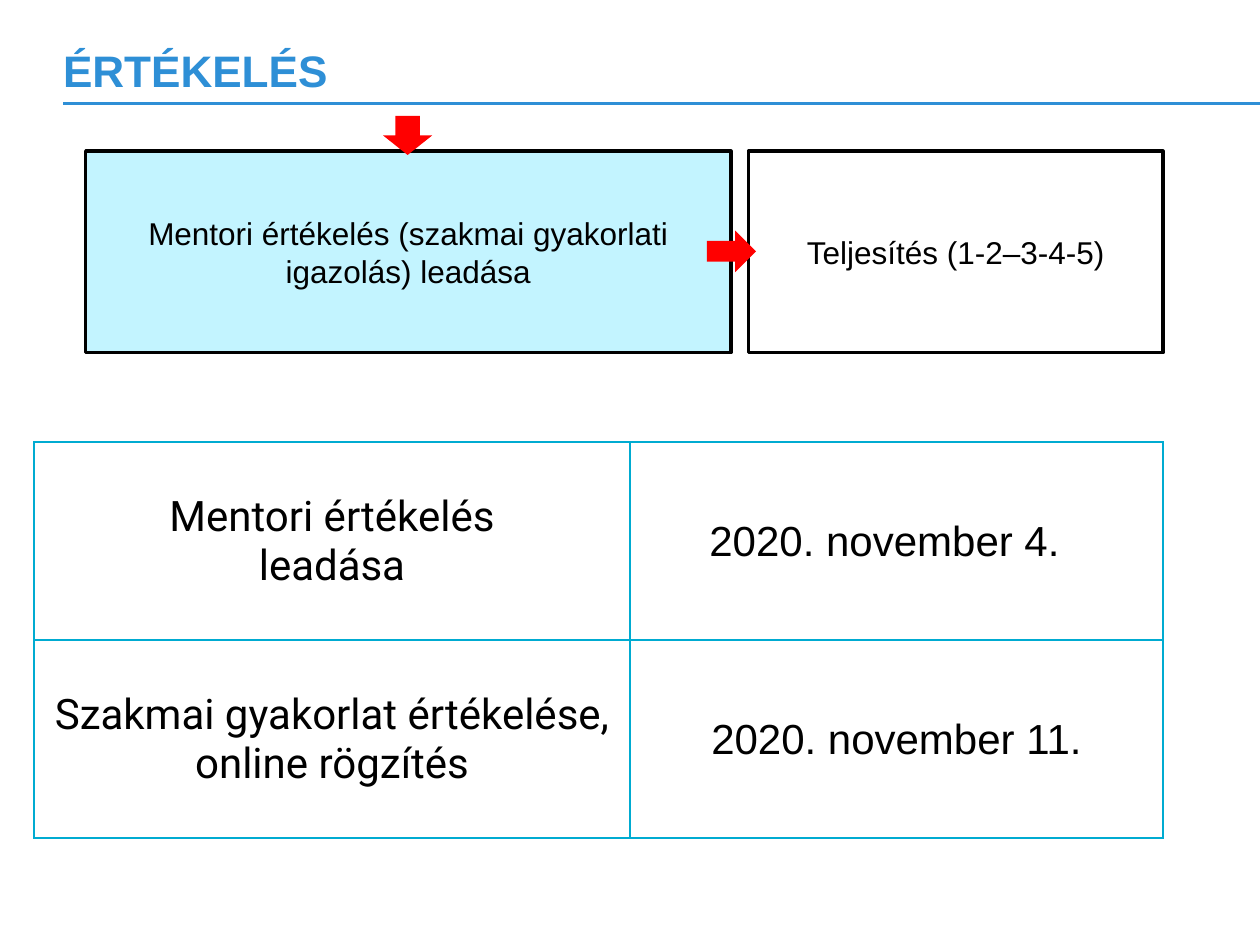
from dataclasses import dataclass

from lxml import etree
from pptx import Presentation
from pptx.dml.color import RGBColor
from pptx.enum.shapes import MSO_CONNECTOR, MSO_SHAPE
from pptx.enum.text import MSO_ANCHOR, MSO_AUTO_SIZE, PP_ALIGN
from pptx.oxml.ns import qn
from pptx.util import Inches, Pt

RECT = MSO_SHAPE.RECTANGLE
RIGHT_ARROW = MSO_SHAPE.RIGHT_ARROW
DOWN_ARROW = MSO_SHAPE.DOWN_ARROW
STRAIGHT = MSO_CONNECTOR.STRAIGHT
MIDDLE = MSO_ANCHOR.MIDDLE
LEFT = PP_ALIGN.LEFT
CENTER = PP_ALIGN.CENTER
NO_FIT = MSO_AUTO_SIZE.NONE


@dataclass(frozen=True)
class Theme:
    accent: str = "2E8FD6"
    highlight: str = "C3F4FF"
    white: str = "FFFFFF"
    black: str = "000000"
    arrow: str = "FF0000"
    border: str = "00ABD1"
    font: str = "Arial"
    label_font: str = "Roboto"
    title_size: float = 25.2
    box_size: float = 18
    table_size: float = 24


class SlideBuilder:
    def __init__(self, slide, theme):
        self.slide = slide
        self.theme = theme

    def format_text(self, tf, size, color, name, align=CENTER, bold=False):
        for p in tf.paragraphs:
            p.alignment = align
            for r in p.runs:
                r.font.size = Pt(size)
                r.font.name = name
                r.font.bold = bold
                r.font.color.rgb = RGBColor.from_string(color)

    def title(self, text, left, top, width, height):
        sp = self.slide.shapes.title
        sp.left, sp.top = Inches(left), Inches(top)
        sp.width, sp.height = Inches(width), Inches(height)
        tf = sp.text_frame
        tf.text = text
        tf.auto_size = NO_FIT
        tf.vertical_anchor = MIDDLE
        tf.margin_left = tf.margin_right = tf.margin_top = tf.margin_bottom = 0
        t = self.theme
        self.format_text(tf, t.title_size, t.accent, t.font, LEFT, True)

    def rule(self, x1, x2, y):
        line = self.slide.shapes.add_connector(
            STRAIGHT, Inches(x1), Inches(y), Inches(x2), Inches(y))
        line.line.color.rgb = RGBColor.from_string(self.theme.accent)
        line.line.width = Pt(1.5)
        etree.SubElement(line._element.spPr, qn("a:effectLst"))

    def shape(self, kind, left, top, width, height, fill):
        sp = self.slide.shapes.add_shape(
            kind, Inches(left), Inches(top), Inches(width), Inches(height))
        sp.shadow.inherit = False
        sp.fill.solid()
        sp.fill.fore_color.rgb = RGBColor.from_string(fill)
        sp.line.fill.background()
        return sp

    def box(self, text, left, top, width, height, fill):
        sp = self.shape(RECT, left, top, width, height, fill)
        sp.line.color.rgb = RGBColor.from_string(self.theme.black)
        sp.line.width = Pt(2)
        tf = sp.text_frame
        tf.word_wrap = True
        tf.vertical_anchor = MIDDLE
        tf.text = text
        t = self.theme
        self.format_text(tf, t.box_size, t.black, t.font)

    def cell_borders(self, cell):
        tcPr = cell._tc.get_or_add_tcPr()
        for i, side in enumerate(("a:lnL", "a:lnR", "a:lnT", "a:lnB")):
            ln = etree.Element(qn(side), w=str(Pt(1)))
            fill = etree.SubElement(ln, qn("a:solidFill"))
            etree.SubElement(fill, qn("a:srgbClr"), val=self.theme.border)
            tcPr.insert(i, ln)

    def table(self, rows, left, top, widths, row_height):
        frame = self.slide.shapes.add_table(
            len(rows), len(widths), Inches(left), Inches(top),
            Inches(sum(widths)), Inches(row_height * len(rows)))
        table = frame.table
        table.first_row = table.horz_banding = False
        for column, width in zip(table.columns, widths):
            column.width = Inches(width)
        t = self.theme
        for i, row in enumerate(rows):
            table.rows[i].height = Inches(row_height)
            for j, (text, right_margin) in enumerate(row):
                cell = table.cell(i, j)
                cell.text_frame.text = text
                cell.vertical_anchor = MIDDLE
                cell.margin_left = cell.margin_top = Inches(0.01)
                cell.margin_right = Inches(right_margin)
                cell.margin_bottom = 0
                cell.fill.solid()
                cell.fill.fore_color.rgb = RGBColor.from_string(t.white)
                name = t.label_font if j == 0 else t.font
                self.format_text(cell.text_frame, t.table_size, t.black, name)
                self.cell_borders(cell)


def main():
    prs = Presentation()
    prs.slide_width, prs.slide_height = Inches(10), Inches(7.5)
    theme = Theme()
    s = SlideBuilder(prs.slides.add_slide(prs.slide_layouts[5]), theme)

    s.rule(0.5, 10, 0.82)
    s.title("ÉRTÉKELÉS", 0.5, 0.4, 9, 0.31)

    box_top, box_height = 1.2, 1.6
    s.box("Mentori értékelés (szakmai gyakorlati igazolás) leadása",
          0.68, box_top, 5.12, box_height, theme.highlight)
    s.box("Teljesítés (1-2–3-4-5)",
          5.94, box_top, 3.29, box_height, theme.white)
    s.shape(RIGHT_ARROW, 5.61, 1.83, 0.39, 0.33, theme.arrow)
    s.shape(DOWN_ARROW, 3.04, 0.92, 0.39, 0.31, theme.arrow)

    deadlines = [
        [("Mentori értékelés\nleadása", 0.01), ("2020. november 4.", 0.2)],
        [("Szakmai gyakorlat értékelése, online rögzítés", 0.01),
         ("2020. november 11.", 0.01)],
    ]
    s.table(deadlines, 0.27, 3.51, (4.73, 4.23), 1.57)

    prs.save("out.pptx")


if __name__ == "__main__":
    main()
